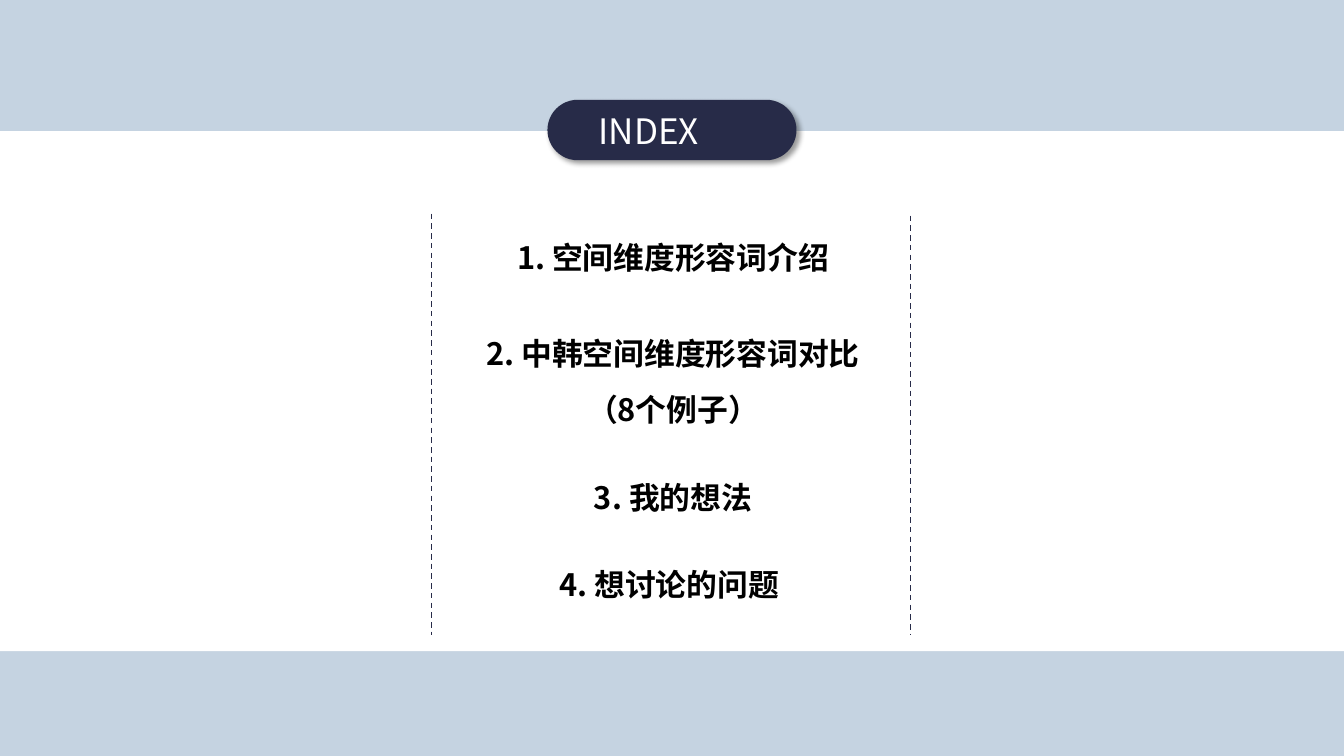
"""Build the index slide: a title pill above a numbered list between dashed rules."""
from dataclasses import dataclass

from lxml.etree import SubElement
from pptx import Presentation
from pptx.dml.color import RGBColor
from pptx.enum.dml import MSO_LINE_DASH_STYLE as DASH
from pptx.enum.shapes import MSO_CONNECTOR as CONN, MSO_SHAPE as SHAPE
from pptx.enum.text import MSO_AUTO_SIZE as FIT, PP_ALIGN as ALIGN
from pptx.oxml import parse_xml
from pptx.oxml.ns import nsdecls, qn
from pptx.shapes.autoshape import Shape
from pptx.slide import Slide
from pptx.util import Inches, Pt

COLORS = {"sky": "C5D3E1", "navy": "272B48", "white": "FFFFFF", "black": "000000"}


@dataclass
class Label:
    left: float
    top: float
    width: float
    height: float
    text: str
    font: str = "Noto Sans CJK SC"
    size: int = 22
    color: str = "black"
    bold: bool = True
    align: ALIGN = ALIGN.CENTER
    spacing: float = 1.5


@dataclass
class Rule:
    x: float
    top: float
    bottom: float = 6.3


LABELS = [
    Label(5.84, 1.04, 1.66, 0.52, "INDEX", "Noto Sans CJK KR", 25, "white",
          False, ALIGN.JUSTIFY, 1.0),
    Label(4.28, 2.14, 4.79, 0.65, "1. 空间维度形容词介绍"),
    Label(4.28, 3.09, 4.79, 2.88, "2. 中韩空间维度形容词对比\n（8个例子）"),
    Label(4.28, 4.52, 4.79, 0.65, "3. 我的想法"),
    Label(4.24, 5.38, 4.79, 0.65, "4. 想讨论的问题"),
]
RULES = [Rule(4.28, 2.12), Rule(9.03, 2.14)]


def rgb(name: str) -> RGBColor:
    return RGBColor.from_string(COLORS[name])


def add_block(s: Slide, kind: SHAPE, box: tuple[float, ...], color: str) -> Shape:
    sp = s.shapes.add_shape(kind, *map(Inches, box))
    sp.shadow.inherit = False
    sp.fill.solid()
    sp.fill.fore_color.rgb = rgb(color)
    sp.line.fill.background()
    return sp


def add_shadow(sp: Shape) -> None:
    effects = sp._element.spPr.find(qn("a:effectLst"))
    effects.append(parse_xml(
        f'<a:outerShdw {nsdecls("a")} blurRad="{Pt(4)}" dist="{Pt(3)}" '
        'dir="2700000" algn="tl" rotWithShape="0"><a:srgbClr val="000000">'
        '<a:alpha val="40000"/></a:srgbClr></a:outerShdw>'))


def add_label(s: Slide, label: Label) -> None:
    box = (label.left, label.top, label.width, label.height)
    tf = s.shapes.add_textbox(*map(Inches, box)).text_frame
    tf.word_wrap = True
    tf.auto_size = FIT.SHAPE_TO_FIT_TEXT
    tf.text = label.text
    for p in tf.paragraphs:
        p.alignment = label.align
        p.line_spacing = label.spacing
        for r in p.runs:
            r.font.name = label.font
            r.font.size = Pt(label.size)
            r.font.bold = label.bold
            r.font.color.rgb = rgb(label.color)
            SubElement(r._r.get_or_add_rPr(), qn("a:ea"), typeface=label.font)


def add_rule(s: Slide, rule: Rule) -> None:
    ends = (rule.x, rule.top, rule.x, rule.bottom)
    cn = s.shapes.add_connector(CONN.STRAIGHT, *map(Inches, ends))
    cn.line.color.rgb = rgb("navy")
    cn.line.width = Pt(1)
    cn.line.dash_style = DASH.DASH
    SubElement(cn._element.spPr, qn("a:effectLst"))


def main() -> None:
    prs = Presentation()
    prs.slide_width, prs.slide_height = Inches(13.33), Inches(7.5)
    s = prs.slides.add_slide(prs.slide_layouts[6])
    s.background.fill.solid()
    s.background.fill.fore_color.rgb = rgb("sky")
    add_block(s, SHAPE.RECTANGLE, (0, 1.3, 13.33, 5.16), "white")
    pill = add_block(s, SHAPE.ROUNDED_RECTANGLE, (5.43, 0.99, 2.47, 0.6), "navy")
    pill.adjustments[0] = 0.5
    add_shadow(pill)
    for label in LABELS:
        add_label(s, label)
    for rule in RULES:
        add_rule(s, rule)
    prs.save("out.pptx")


if __name__ == "__main__":
    main()
